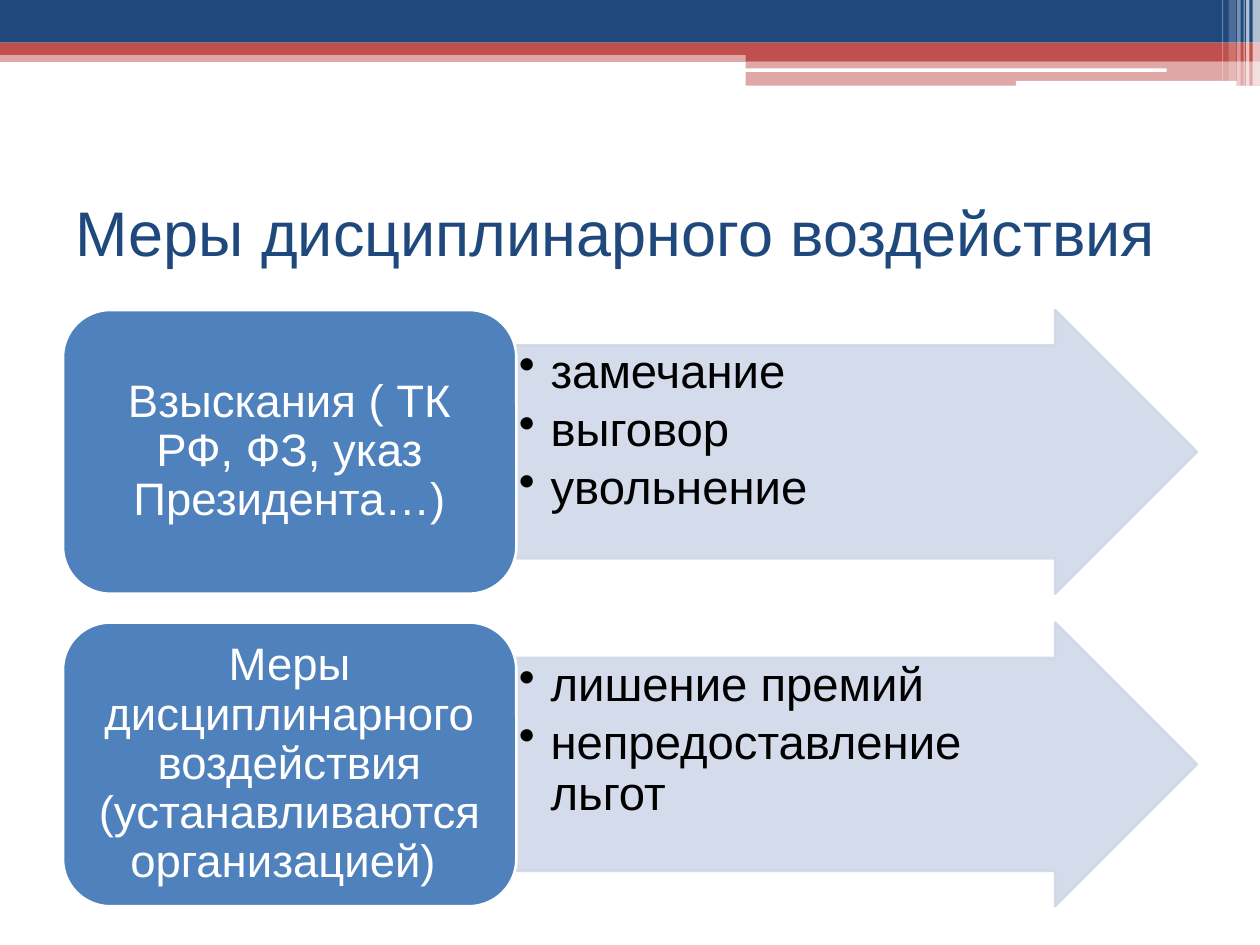
from lxml import etree
from pptx import Presentation
from pptx import util as u
from pptx.dml import color
from pptx.enum import shapes, text
from pptx.oxml import ns

FONT = "Arial"
NAVY, RED, WHITE, BLACK = "1F497D", "C0504D", "FFFFFF", "000000"
BLUE, PALE = "4F81BD", "D0D8E8"
RECT = shapes.MSO_SHAPE.RECTANGLE
ROUNDED = shapes.MSO_SHAPE.ROUNDED_RECTANGLE
ARROW = shapes.MSO_SHAPE.RIGHT_ARROW


def paint(fill, hex_color, opacity=100):
    fill.solid()
    fill.fore_color.rgb = color.RGBColor.from_string(hex_color)
    if opacity < 100:
        for node in fill._xPr.iter(ns.qn("a:srgbClr")):
            etree.SubElement(node, ns.qn("a:alpha"), val=str(opacity * 1000))


class SlideBuilder:
    def __init__(self, slide):
        self.slide = slide

    def shape(self, kind, box, fill, opacity=100, line=None):
        """Add a preset shape; box is left, top, width, height in cm."""
        shape = self.slide.shapes.add_shape(kind, *map(u.Cm, box))
        shape.shadow.inherit = False
        paint(shape.fill, fill, opacity)
        if line:
            paint(shape.line.fill, line, opacity)
            shape.line.width = u.Pt(1.5)
        else:
            shape.line.fill.background()
        return shape

    def run(self, paragraph, words, size, hex_color):
        run = paragraph.add_run()
        run.text = words
        run.font.name = FONT
        run.font.size = u.Pt(size)
        paint(run.font.fill, hex_color)

    def frame(self, shape, side, edge, anchor):
        frame = shape.text_frame
        frame.word_wrap = True
        frame.margin_left = frame.margin_right = u.Cm(side)
        frame.margin_top = frame.margin_bottom = u.Cm(edge)
        frame.vertical_anchor = anchor
        return frame

    def title(self, words, box):
        title = self.slide.shapes.title
        title.left, title.top, title.width, title.height = map(u.Cm, box)
        frame = self.frame(title, 0.25, 0.13, text.MSO_ANCHOR.MIDDLE)
        paragraph = frame.paragraphs[0]
        paragraph.alignment = text.PP_ALIGN.LEFT
        self.run(paragraph, words, 36, NAVY)

    def heading_box(self, words, box):
        shape = self.shape(ROUNDED, box, BLUE, line=WHITE)
        frame = self.frame(shape, 0.28, 0.13, text.MSO_ANCHOR.MIDDLE)
        paragraph = frame.paragraphs[0]
        paragraph.alignment = text.PP_ALIGN.CENTER
        paragraph.line_spacing = 0.9
        self.run(paragraph, words, 26, WHITE)

    def list_arrow(self, items, box):
        shape = self.shape(ARROW, box, PALE, 90, PALE)
        shape.adjustments[0], shape.adjustments[1] = 0.75, 0.5
        frame = self.frame(shape, 0.05, 0.05, text.MSO_ANCHOR.TOP)
        for index, item in enumerate(items):
            paragraph = frame.add_paragraph() if index else frame.paragraphs[0]
            paragraph.level = 1
            paragraph.alignment = text.PP_ALIGN.LEFT
            paragraph.line_spacing = 0.9
            paragraph.space_after = u.Pt(4)
            properties = paragraph._p.get_or_add_pPr()
            properties.set("marL", str(u.Cm(0.64)))
            properties.set("indent", str(u.Cm(-0.64)))
            etree.SubElement(properties, ns.qn("a:buChar"), char="•")
            self.run(paragraph, item, 27, BLACK)


# kind, (left, top, width, height), colour, opacity
BANNER = [
    (RECT, (0, 1.02, 25.4, 0.23), RED, 50),
    (RECT, (0, 0, 25.4, 0.86), NAVY, 100),
    (RECT, (0, 0.86, 25.4, 0.25), RED, 100),
    (RECT, (15.03, 1, 10.37, 0.23), RED, 100),
    (RECT, (15.03, 1.23, 10.37, 0.5), RED, 50),
    (ROUNDED, (15.02, 1.38, 8.5, 0.07), WHITE, 100),
    (ROUNDED, (20.48, 1.63, 4.45, 0.1), WHITE, 100),
]
# left, width, height, opacity
STRIPES = [
    (25.25, 0.15, 1.73, 65),
    (25.12, 0.07, 1.73, 65),
    (25.07, 0.02, 1.73, 60),
    (24.94, 0.07, 1.73, 40),
    (24.77, 0.15, 1.63, 20),
    (24.64, 0.02, 1.63, 30),
]
MEASURES = [
    ("Взыскания ( ТК РФ, ФЗ, указ Президента…)",
     ["замечание", "выговор", "увольнение"]),
    ("Меры дисциплинарного воздействия (устанавливаются организацией) ",
     ["лишение премий", "непредоставление льгот"]),
]
LEFT, TOP, ROW_HEIGHT, ROW_STEP = 1.27, 6.25, 5.72, 6.3
BOX_WIDTH, ARROW_WIDTH = 9.14, 13.72


def main():
    presentation = Presentation()
    presentation.slide_width, presentation.slide_height = u.Cm(25.4), u.Cm(19.05)
    builder = SlideBuilder(
        presentation.slides.add_slide(presentation.slide_layouts[5]))
    for kind, box, fill, opacity in BANNER:
        builder.shape(kind, box, fill, opacity)
    for left, width, height, opacity in STRIPES:
        builder.shape(RECT, (left, 0, width, height), WHITE, opacity)
    builder.title("Меры дисциплинарного воздействия", (1.27, 3.18, 22.86, 2.97))
    for row, (heading, items) in enumerate(MEASURES):
        top = TOP + row * ROW_STEP
        builder.list_arrow(items, (LEFT + BOX_WIDTH, top, ARROW_WIDTH, ROW_HEIGHT))
        builder.heading_box(heading, (LEFT, top, BOX_WIDTH, ROW_HEIGHT))
    presentation.save("out.pptx")


if __name__ == "__main__":
    main()
